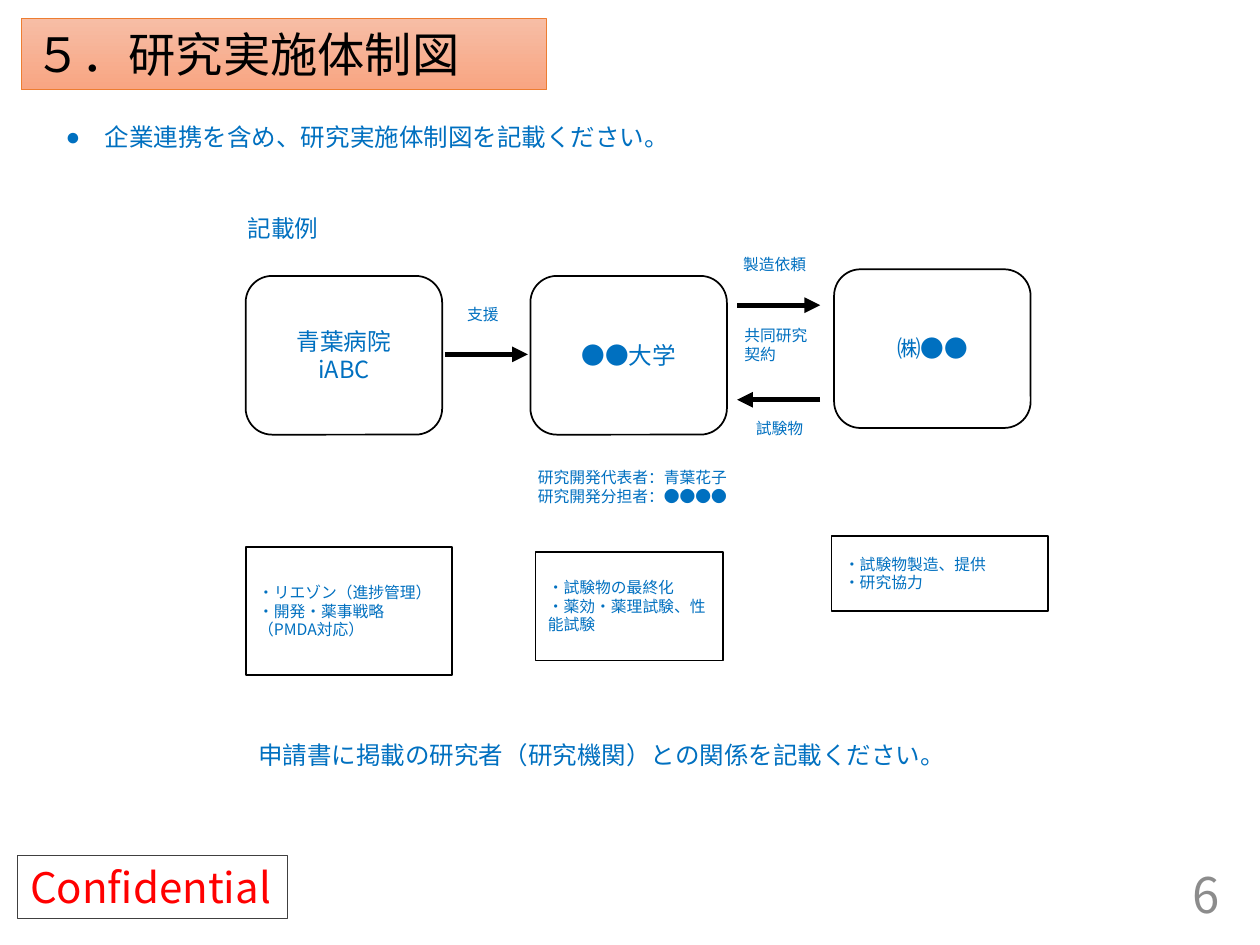
from pptx import Presentation
from pptx.dml.color import RGBColor
from pptx.enum.shapes import MSO_CONNECTOR, MSO_SHAPE
from pptx.enum.text import MSO_ANCHOR, MSO_AUTO_SIZE, PP_ALIGN
from pptx.oxml.ns import qn
from pptx.util import Inches, Pt
from lxml.etree import SubElement

HUE = {"ink": "000000", "blue": "0070C0", "white": "FFFFFF", "red": "FF0000",
       "gray": "8C8C8C", "dark": "404040", "rim": "ED7D31",
       "top": "F7BDA5", "base": "F8A582"}
FACE = "Noto Sans CJK JP"

deck = Presentation()
deck.slide_width, deck.slide_height = Inches(10), Inches(7.5)
col, row = deck.slide_width / 100, deck.slide_height / 100
slide = deck.slides.add_slide(deck.slide_layouts[1])
items = slide.shapes


def place(x, y, w, h):
    return [int(v) for v in (x * col, y * row, w * col, h * row)]


def write(box, text, size, hue="blue", align=PP_ALIGN.LEFT,
          anchor=MSO_ANCHOR.MIDDLE, wrap=True):
    frame = box.text_frame
    frame.text = text
    look = {"auto_size": MSO_AUTO_SIZE.NONE, "word_wrap": wrap,
            "vertical_anchor": anchor,
            "margin_left": Inches(0.1), "margin_right": Inches(0.1),
            "margin_top": Inches(0.05), "margin_bottom": Inches(0.05)}
    for key, val in look.items():
        setattr(frame, key, val)
    for para in frame.paragraphs:
        form = {"alignment": align, "space_before": Pt(0),
                "line_spacing": Pt(round(size * 1.18, 1))}
        for key, val in form.items():
            setattr(para, key, val)
        for run in para.runs:
            run.font.size, run.font.name = Pt(size), FACE
            run.font.color.rgb = RGBColor.from_string(HUE[hue])
            SubElement(run.font._element, qn("a:ea")).set("typeface", FACE)


title = items.title
body = slide.placeholders[1]
spots = [(title, (1.7, 2, 41.7, 7.5)), (body, (4.2, 12.3, 94.3, 4.5))]
for box, spot in spots:
    box.left, box.top, box.width, box.height = place(*spot)

write(title, "５．研究実施体制図", 27, "ink")
title.fill.gradient()
title.fill.gradient_angle = 270
for stop, hue in zip(title.fill.gradient_stops, ("top", "base")):
    stop.color.rgb = RGBColor.from_string(HUE[hue])
title.line.color.rgb = RGBColor.from_string(HUE["rim"])
title.line.width = Pt(0.5)

write(body, "企業連携を含め、研究実施体制図を記載ください。", 14, anchor=MSO_ANCHOR.TOP)
props = body.text_frame.paragraphs[0]._p.get_or_add_pPr()
props.set("marL", str(Inches(0.31)))
props.set("indent", str(-Inches(0.31)))
SubElement(props, qn("a:buChar")).set("char", "●")

round_box, plain = MSO_SHAPE.ROUNDED_RECTANGLE, MSO_SHAPE.RECTANGLE
mid, left = PP_ALIGN.CENTER, PP_ALIGN.LEFT
boxes = [
    (round_box, (19.5, 29.2, 15.6, 16.8), "青葉病院\niABC", 13.5, mid),
    (round_box, (42.1, 29.2, 15.6, 16.8), "●●大学", 13.5, mid),
    (round_box, (66.2, 28.5, 15.6, 16.8), "㈱●●", 13.5, mid),
    (plain, (19.5, 57.9, 16.4, 13.5),
     "・リエゾン（進捗管理）\n・開発・薬事戦略（PMDA対応）", 9, left),
    (plain, (42.5, 58.4, 14.9, 11.5),
     "・試験物の最終化\n・薬効・薬理試験、性能試験", 9, left),
    (plain, (66, 56.7, 17.2, 8), "・試験物製造、提供\n・研究協力", 9, left),
]
for kind, spot, text, size, align in boxes:
    box = items.add_shape(kind, *place(*spot))
    box.shadow.inherit = False
    box.fill.solid()
    box.fill.fore_color.rgb = RGBColor.from_string(HUE["white"])
    box.line.color.rgb = RGBColor.from_string(HUE["ink"])
    box.line.width = Pt(1)
    write(box, text, size, align=align)

arrows = [(35.3, 41.9, 37.5), (58.5, 65.1, 32.3), (65.1, 58.5, 42.3)]
for start, end, y in arrows:
    x1, y1, x2, y2 = place(start, y, end, y)
    arrow = items.add_connector(MSO_CONNECTOR.STRAIGHT, x1, y1, x2, y2)
    arrow.line.color.rgb = RGBColor.from_string(HUE["ink"])
    arrow.line.width = Pt(3)
    SubElement(arrow.line._get_or_add_ln(), qn("a:tailEnd")).set("type", "triangle")
    SubElement(arrow._element.spPr, qn("a:effectLst"))

notes = [
    ((18.7, 22, 7.7, 4.4), "記載例", 13.5),
    ((36.1, 31.6, 4.5, 3.3), "支援", 9),
    ((58, 26.3, 7.1, 3.3), "製造依頼", 9),
    ((58.1, 33.9, 7.1, 5.3), "共同研究\n契約", 9),
    ((59, 43.7, 5.8, 3.3), "試験物", 9),
    ((41.7, 48.9, 17.2, 5.3), "研究開発代表者：青葉花子\n研究開発分担者：●●●●", 9),
    ((19.5, 77.7, 73.1, 4.5), "申請書に掲載の研究者（研究機関）との関係を記載ください。", 14),
]
for spot, text, size in notes:
    note = items.add_textbox(*place(*spot))
    write(note, text, size, anchor=MSO_ANCHOR.TOP, wrap=size == 14)

mark = items.add_textbox(*place(1.4, 90.5, 21.4, 6.7))
write(mark, "Confidential", 24, "red", wrap=False)
mark.line.color.rgb = RGBColor.from_string(HUE["dark"])
mark.line.width = Pt(0.75)

page = items.add_textbox(*place(75.3, 92, 22.5, 5.3))
write(page, "6", 28, "gray", PP_ALIGN.RIGHT)

deck.save("out.pptx")
